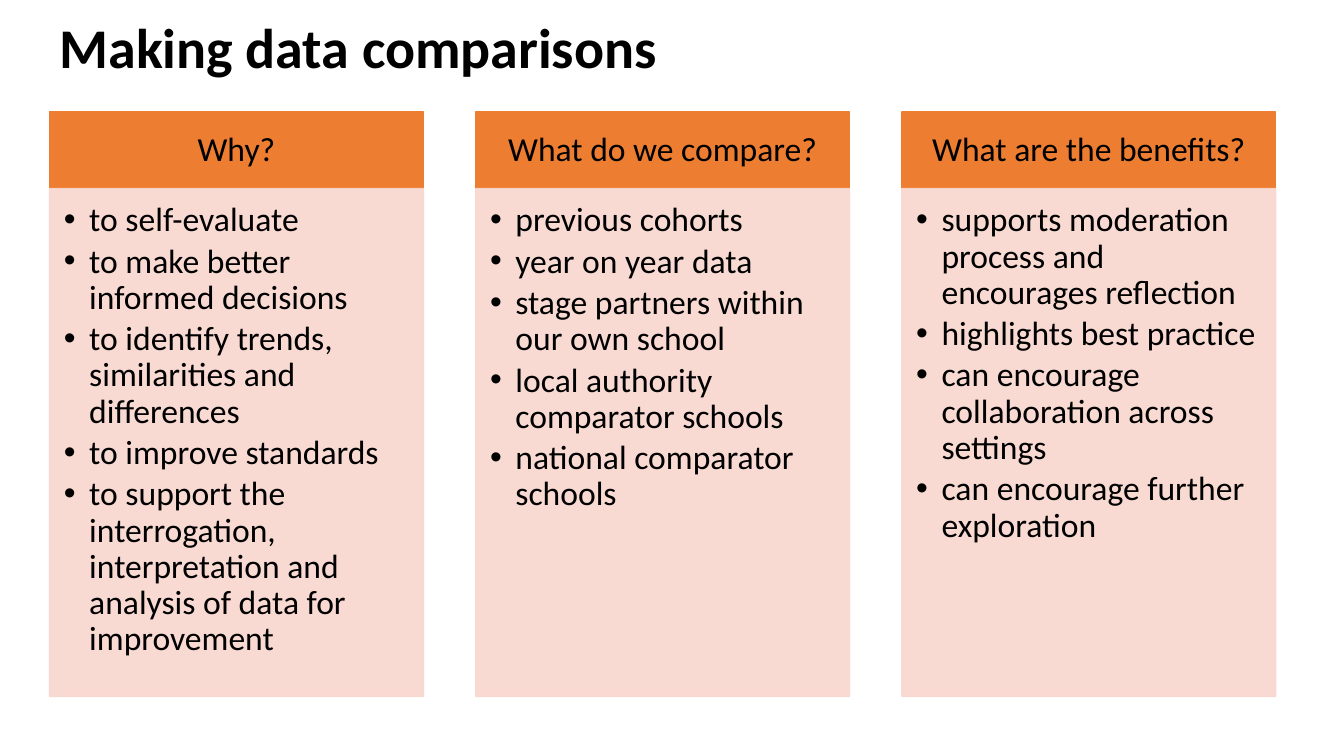
"""Build a slide with three headed columns on making data comparisons."""
import pptx
import pptx.dml.color
import pptx.enum.shapes
import pptx.enum.text
import pptx.oxml
import pptx.oxml.ns
import pptx.util
from dataclasses import dataclass

Cm = pptx.util.Cm
Pt = pptx.util.Pt
Align = pptx.enum.text.PP_ALIGN
Anchor = pptx.enum.text.MSO_ANCHOR

TITLE = "Making data comparisons"
COLUMNS = [
    ("Why?", [
        "to self-evaluate",
        "to make better informed decisions",
        "to identify trends, similarities and differences",
        "to improve standards",
        "to support the interrogation, interpretation and analysis of data for improvement",
    ]),
    ("What do we compare?", [
        "previous cohorts",
        "year on year data",
        "stage partners within our own school",
        "local authority comparator schools",
        "national comparator schools",
    ]),
    ("What are the benefits?", [
        "supports moderation process and encourages reflection",
        "highlights best practice",
        "can encourage collaboration across settings",
        "can encourage further exploration",
    ]),
]


@dataclass(frozen=True)
class Theme:
    font: str = "Calibri"
    text: str = "000000"
    header: str = "ED7D31"
    panel: str = "F8D7CE"
    panel_opacity: int = 90
    title_size: int = 40
    text_size: int = 24


THEME = Theme()
LEFT, TOP = 1.25, 2.82
COLUMN_WIDTH, COLUMN_PITCH = 9.42, 10.74
HEADER_HEIGHT, PANEL_HEIGHT = 1.93, 12.8
BULLET_INDENT = Cm(0.64)

TITLE_PLACE = dict(left=Cm(LEFT), top=Cm(0.51), width=Cm(26.04), height=Cm(1.52))
TITLE_FRAME = dict(vertical_anchor=Anchor.MIDDLE, word_wrap=True,
                   auto_size=pptx.enum.text.MSO_AUTO_SIZE.NONE)
HEADER_FRAME = dict(vertical_anchor=Anchor.MIDDLE, word_wrap=True,
                    margin_left=Cm(0.48), margin_right=Cm(0.48),
                    margin_top=Cm(0.28), margin_bottom=Cm(0.28))
PANEL_FRAME = dict(vertical_anchor=Anchor.TOP, word_wrap=True,
                   margin_left=Cm(0.36), margin_right=Cm(0.48),
                   margin_top=Cm(0.36), margin_bottom=Cm(0.53))
TITLE_PARAGRAPH = dict(alignment=Align.LEFT, line_spacing=0.9)
HEADER_PARAGRAPH = dict(alignment=Align.CENTER, line_spacing=0.9)
BULLET_PARAGRAPH = dict(alignment=Align.LEFT, line_spacing=0.9, space_after=Pt(3.6))


def set_attributes(target, values):
    for name, value in values.items():
        setattr(target, name, value)


def write(frame, lines, frame_format, paragraph_format, size, bold=False):
    set_attributes(frame, frame_format)
    frame.text = "\n".join(lines)
    for paragraph in frame.paragraphs:
        set_attributes(paragraph, paragraph_format)
        set_attributes(paragraph.font, dict(name=THEME.font, size=Pt(size), bold=bold))
        paragraph.font.color.rgb = pptx.dml.color.RGBColor.from_string(THEME.text)


def add_bullets(frame):
    for paragraph in frame.paragraphs:
        properties = paragraph._p.get_or_add_pPr()
        properties.set("marL", str(BULLET_INDENT))
        properties.set("indent", str(-BULLET_INDENT))
        for tag, name, value in (("a:buFont", "typeface", "Arial"), ("a:buChar", "char", "•")):
            bullet = pptx.oxml.parse_xml(f"<{tag} {pptx.oxml.ns.nsdecls('a')}/>")
            bullet.set(name, value)
            properties.insert_element_before(bullet, "a:tabLst", "a:defRPr", "a:extLst")


def add_box(slide, left, top, height, color, opacity=100):
    box = slide.shapes.add_shape(pptx.enum.shapes.MSO_SHAPE.RECTANGLE,
                                 Cm(left), Cm(top), Cm(COLUMN_WIDTH), Cm(height))
    box.shadow.inherit = False
    box.line.width = Pt(1)
    for fill in (box.fill, box.line.fill):
        fill.solid()
        fill.fore_color.rgb = pptx.dml.color.RGBColor.from_string(color)
    if opacity < 100:
        for element in box._element.spPr.iter(pptx.oxml.ns.qn("a:srgbClr")):
            element.append(pptx.oxml.parse_xml(
                f'<a:alpha {pptx.oxml.ns.nsdecls("a")} val="{opacity * 1000}"/>'))
    return box


def main():
    presentation = pptx.Presentation()
    set_attributes(presentation, dict(slide_width=Cm(33.87), slide_height=Cm(19.05)))
    slide = presentation.slides.add_slide(presentation.slide_layouts.get_by_name("Title Only"))
    title = slide.shapes.title
    set_attributes(title, TITLE_PLACE)
    write(title.text_frame, [TITLE], TITLE_FRAME, TITLE_PARAGRAPH, THEME.title_size, bold=True)

    for index, (heading, points) in enumerate(COLUMNS):
        left = LEFT + index * COLUMN_PITCH
        header = add_box(slide, left, TOP, HEADER_HEIGHT, THEME.header)
        write(header.text_frame, [heading], HEADER_FRAME, HEADER_PARAGRAPH, THEME.text_size)
        panel = add_box(slide, left, TOP + HEADER_HEIGHT, PANEL_HEIGHT,
                        THEME.panel, THEME.panel_opacity)
        write(panel.text_frame, points, PANEL_FRAME, BULLET_PARAGRAPH, THEME.text_size)
        add_bullets(panel.text_frame)

    presentation.save("out.pptx")


if __name__ == "__main__":
    main()
